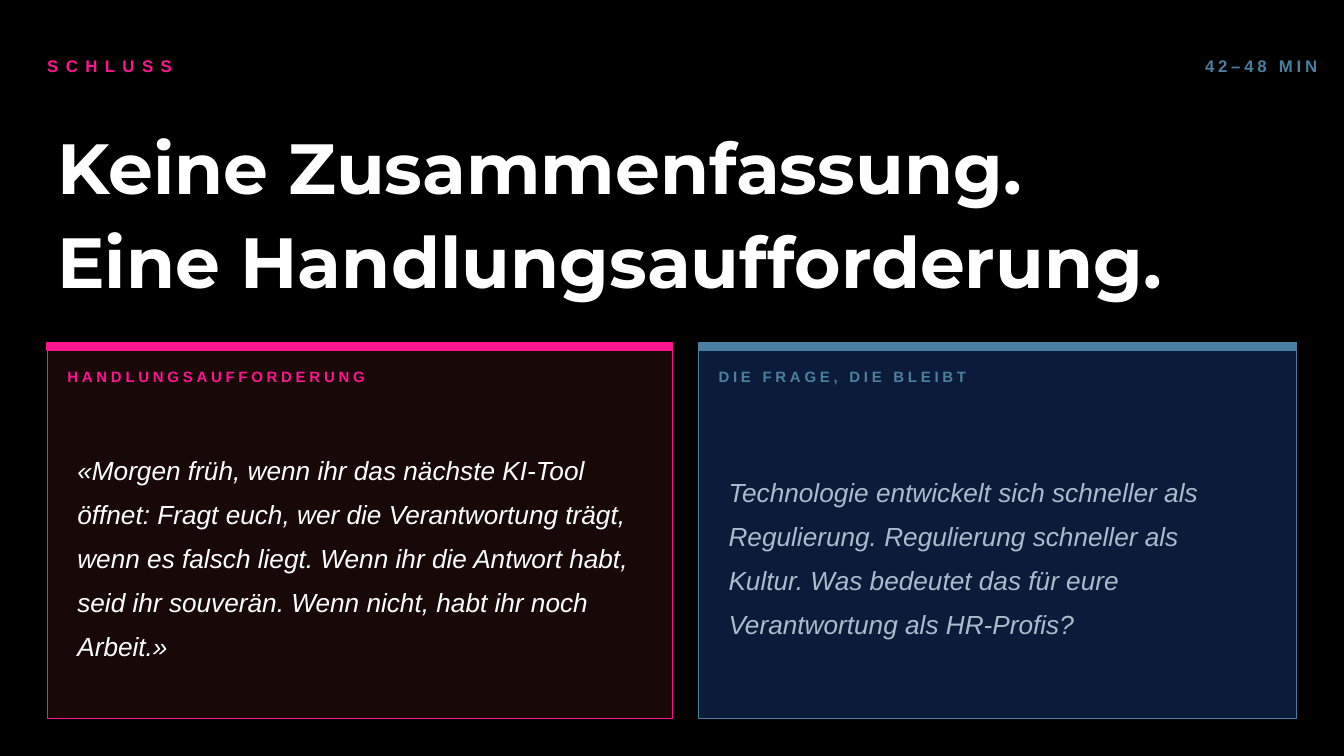
from pptx import Presentation
from pptx.dml.color import RGBColor
from pptx.enum.shapes import MSO_SHAPE
from pptx.enum.text import MSO_ANCHOR, MSO_AUTO_SIZE, PP_ALIGN
from pptx.util import Cm, Pt

BLACK = RGBColor(0x00, 0x00, 0x00)
WHITE = RGBColor(0xFF, 0xFF, 0xFF)
PINK = RGBColor(0xFF, 0x14, 0x90)
STEEL = RGBColor(0x4A, 0x7F, 0xA1)
STEEL_LABEL = RGBColor(0x4B, 0x80, 0xA0)
MAROON = RGBColor(0x18, 0x08, 0x08)
NAVY = RGBColor(0x0D, 0x1B, 0x3A)
MIST = RGBColor(0xAA, 0xBB, 0xCC)

# Content
SECTION = "SCHLUSS"
TIMING = "42–48 MIN"
HEADLINE = ["Keine Zusammenfassung.", "Eine Handlungsaufforderung."]
CARDS = [
    dict(left=1.19, width=15.75, label_width=14.55, quote_width=14.73,
         fill=MAROON, accent=PINK, border=0.7,
         label="HANDLUNGSAUFFORDERUNG", label_color=PINK, quote_color=WHITE,
         quote="«Morgen früh, wenn ihr das nächste KI-Tool öffnet: Fragt euch, "
               "wer die Verantwortung trägt, wenn es falsch liegt. Wenn ihr die "
               "Antwort habt, seid ihr souverän. Wenn nicht, habt ihr noch Arbeit.»"),
    dict(left=17.6, width=15.06, label_width=13.89, quote_width=13.89,
         fill=NAVY, accent=STEEL, border=0.5,
         label="DIE FRAGE, DIE BLEIBT", label_color=STEEL_LABEL, quote_color=MIST,
         quote="Technologie entwickelt sich schneller als Regulierung. "
               "Regulierung schneller als Kultur. Was bedeutet das für eure "
               "Verantwortung als HR-Profis?"),
]

# Layout in cm
MARGIN = 1.19
CARD_TOP, CARD_HEIGHT, BAR_HEIGHT = 8.64, 9.47, 0.18
CARD_PAD = 0.51
LABEL_TOP, LABEL_HEIGHT = 8.97, 1.02
QUOTE_TOP, QUOTE_HEIGHT = 10.34, 7.11

# Text formats
KICKER = dict(name="Arial", size=Pt(12), bold=True)
LABEL = dict(name="Arial", size=Pt(10.7), bold=True)
QUOTE = dict(name="Arial", size=Pt(18.7), italic=True)
TITLE = dict(name="Montserrat", size=Pt(50.7), bold=True)


def write(frame, lines, style, color, spacing=None, align=PP_ALIGN.LEFT, tracking=None):
    frame.word_wrap = True
    frame.auto_size = MSO_AUTO_SIZE.NONE
    frame.vertical_anchor = MSO_ANCHOR.MIDDLE
    for number, line in enumerate(lines):
        paragraph = frame.add_paragraph() if number else frame.paragraphs[0]
        paragraph.alignment = align
        paragraph.line_spacing = spacing
        run = paragraph.add_run()
        run.text = line
        for key, value in style.items():
            setattr(run.font, key, value)
        run.font.color.rgb = color
        if tracking:
            run.font._element.set("spc", str(round(tracking * 100)))


def add_text(box, text, style, color, flush=True, **options):
    frame = slide.shapes.add_textbox(*map(Cm, box)).text_frame
    if flush:
        for side in ("left", "top", "right", "bottom"):
            setattr(frame, f"margin_{side}", 0)
    write(frame, [text], style, color, **options)


def add_block(box, fill, line, line_width):
    block = slide.shapes.add_shape(MSO_SHAPE.RECTANGLE, *map(Cm, box))
    block.shadow.inherit = False
    block.fill.solid()
    block.fill.fore_color.rgb = fill
    block.line.color.rgb = line
    block.line.width = Pt(line_width)


deck = Presentation()
deck.slide_width, deck.slide_height = Cm(33.87), Cm(19.05)
slide = deck.slides.add_slide(deck.slide_layouts[5])
slide.background.fill.solid()
slide.background.fill.fore_color.rgb = BLACK

# Header row and headline
add_text((MARGIN, MARGIN, 10.16, 0.94), SECTION, KICKER, PINK, tracking=5.3)
add_text((25.4, MARGIN, 7.8, 0.94), TIMING, KICKER, STEEL,
         align=PP_ALIGN.RIGHT, tracking=2.7)
headline = slide.shapes.title
headline.left, headline.top, headline.width, headline.height = map(
    Cm, (MARGIN, 2.72, 30.48, 5.08))
write(headline.text_frame, HEADLINE, TITLE, WHITE, spacing=1.1)

# Two cards, each with an accent bar, a label and a quote
for card in CARDS:
    left, width, accent = card["left"], card["width"], card["accent"]
    inner = left + CARD_PAD
    add_block((left, CARD_TOP, width, CARD_HEIGHT), card["fill"], accent, card["border"])
    add_block((left, CARD_TOP, width, BAR_HEIGHT), accent, accent, 1)
    add_text((inner, LABEL_TOP, card["label_width"], LABEL_HEIGHT),
             card["label"], LABEL, card["label_color"], tracking=2.7)
    add_text((inner, QUOTE_TOP, card["quote_width"], QUOTE_HEIGHT),
             card["quote"], QUOTE, card["quote_color"], flush=False, spacing=1.4)

deck.save("out.pptx")
